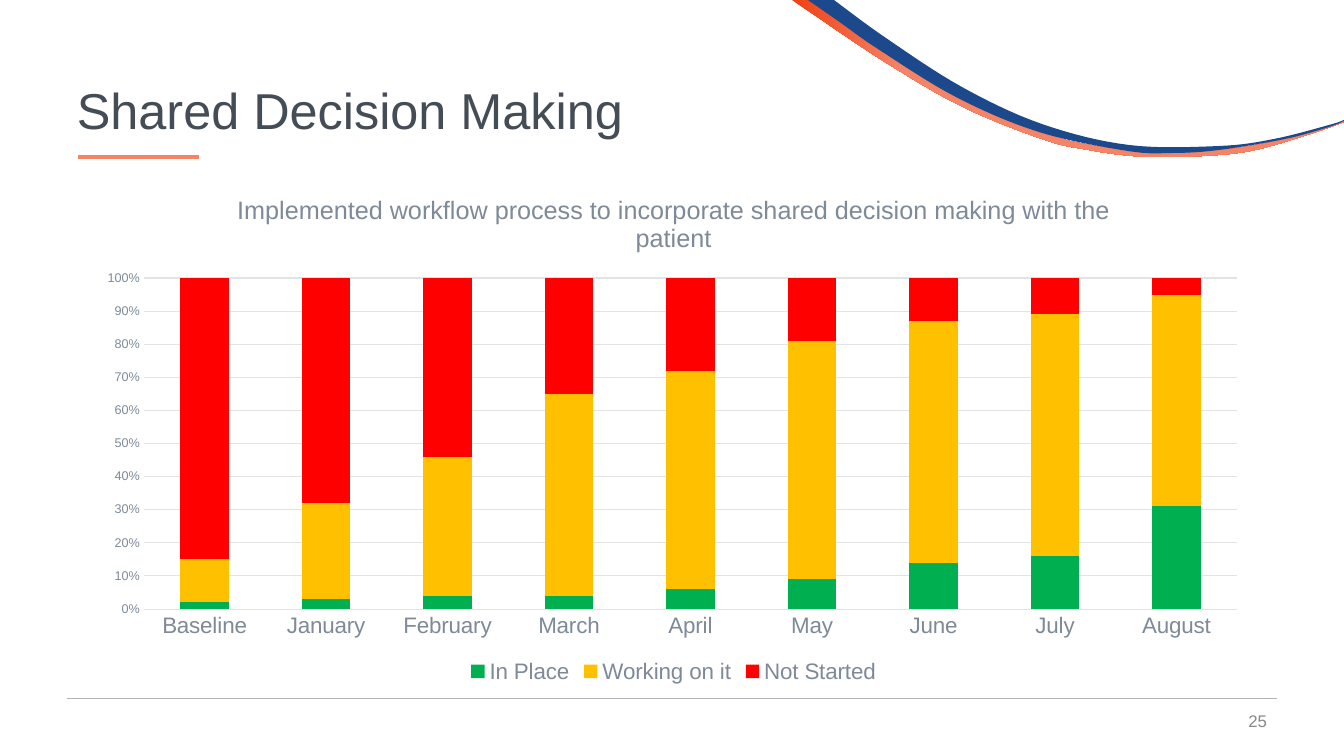
from lxml.etree import SubElement
from pptx import Presentation
from pptx.chart.data import CategoryChartData
from pptx.dml.color import RGBColor
from pptx.enum.chart import XL_CHART_TYPE as ChartType, XL_LEGEND_POSITION as LegendPosition, XL_TICK_MARK as TickMark
from pptx.enum.text import MSO_ANCHOR as Anchor, PP_ALIGN as Align
from pptx.oxml import parse_xml
from pptx.oxml.ns import nsdecls, qn
from pptx.util import Emu, Pt

PX = 914400 / 100.8
THEME = {
    "font": "Arial",
    "title": (36, "444C55"),
    "number": (12, "898989"),
    "chart": (10, "444C55"),
    "chart_title": (18, "7E8A98"),
    "labels": (16, "7E8A98"),
    "scale": (9, "7E8A98"),
    "grid": "E1E4E7",
    "rule": "AFB3B9",
    "navy": "1C498B",
    "coral": "F58366",
    "orange": "F04115",
    "series": ["00B050", "FFC000", "FF0000"],
}


def px(*lengths):
    return [Emu(round(length * PX)) for length in lengths]


def style(font, role):
    size, color = THEME[role]
    formats = {"name": THEME["font"], "size": Pt(size), "bold": False}
    for name, value in formats.items():
        setattr(font, name, value)
    font.color.rgb = RGBColor.from_string(color)


deck = Presentation()
deck.slide_width, deck.slide_height = px(1344, 756)
page = deck.slides.add_slide(deck.slide_layouts[6])

ribbons = [
    ("coral",
     [(811, 0), (889, 54), (966, 100), (1047, 134), (1090, 145), (1134, 151),
      (1177, 153), (1244, 147), (1310, 133), (1344, 121)],
     [(792, 0), (810, 12), (885, 62), (963, 107), (1045, 140), (1089, 150),
      (1133, 156), (1178, 157), (1245, 152), (1304, 136), (1344, 122)]),
    ("navy",
     [(834, 0), (886, 38), (962, 87), (1042, 124), (1129, 145),
      (1219, 146), (1274, 139), (1329, 125), (1344, 120)],
     [(808, 0), (841, 23), (878, 49), (956, 97), (1039, 132), (1128, 151),
      (1173, 153), (1219, 150), (1285, 139), (1329, 127), (1344, 121)]),
]
STEPS = 8
for color, upper, lower in ribbons:
    outline = []
    for edge in (upper, lower[::-1]):
        knots = [edge[0], *edge, edge[-1]]
        for a, b, c, d in zip(knots, knots[1:], knots[2:], knots[3:]):
            for step in range(STEPS):
                t = step / STEPS
                outline.append(px(*(
                    q + t * (r - p) / 2
                    + t**2 * (2 * p - 5 * q + 4 * r - s) / 2
                    + t**3 * (3 * q - p - 3 * r + s) / 2
                    for p, q, r, s in zip(a, b, c, d))))
        outline.append(px(*edge[-1]))
    builder = page.shapes.build_freeform(*outline[0])
    builder.add_line_segments(outline[1:], close=True)
    ribbon = builder.convert_to_shape()
    ribbon.shadow.inherit = False
    ribbon.line.fill.background()
    if color == "coral":
        ribbon.fill.gradient()
        ribbon.fill.gradient_angle = 0
        for stop, shade, place in zip(ribbon.fill.gradient_stops, ("orange", "coral"), (0, 0.2)):
            stop.color.rgb = RGBColor.from_string(THEME[shade])
            stop.position = place
    else:
        ribbon.fill.solid()
        ribbon.fill.fore_color.rgb = RGBColor.from_string(THEME[color])

for left, right, y, color, width in [(67, 1277, 698, "rule", 0.5), (78, 199, 157, "coral", 2.5)]:
    rule = page.shapes.add_connector(1, *px(left, y, right, y))
    rule.line.color.rgb = RGBColor.from_string(THEME[color])
    rule.line.width = Pt(width)
    SubElement(rule._element.spPr, qn("a:effectLst"))

for words, place, role, align, spacing in [
    ("25", (975, 701, 302, 40), "number", Align.RIGHT, 1.0),
    ("Shared Decision Making", (67, 40, 1210, 146), "title", Align.LEFT, 0.9),
]:
    box = page.shapes.add_textbox(*px(*place))
    box.text_frame.word_wrap = True
    box.text_frame.vertical_anchor = Anchor.MIDDLE
    para = box.text_frame.paragraphs[0]
    para.alignment = align
    para.line_spacing = spacing
    span = para.add_run()
    span.text = words
    style(span.font, role)

progress = CategoryChartData()
progress.categories = ["Baseline", "January", "February", "March", "April",
                       "May", "June", "July", "August"]
progress.add_series("In Place", [2, 3, 4, 4, 6, 9, 14, 16, 31])
progress.add_series("Working on it", [13, 29, 42, 61, 66, 72, 74, 73, 64])
progress.add_series("Not Started", [84, 68, 54, 35, 28, 19, 13, 11, 5])
chart = page.shapes.add_chart(
    ChartType.COLUMN_STACKED_100, *px(85, 173, 1177, 515), progress).chart
style(chart.font, "chart")

chart.has_title = True
heading = chart.chart_title.text_frame
heading.text = "Implemented workflow process to incorporate shared decision making with the patient"
style(heading.paragraphs[0].runs[0].font, "chart_title")

chart.has_legend = True
chart.legend.position = LegendPosition.BOTTOM
chart.legend.include_in_layout = False
style(chart.legend.font, "labels")

for axis, role in [(chart.category_axis, "labels"), (chart.value_axis, "scale")]:
    axis.major_tick_mark = axis.minor_tick_mark = TickMark.NONE
    style(axis.tick_labels.font, role)

months, shares = chart.category_axis, chart.value_axis
shares.has_major_gridlines = True
shares.maximum_scale, shares.minimum_scale, shares.major_unit = 1, 0, 0.1
shares.tick_labels.number_format = "0%"
shares.tick_labels.number_format_is_linked = False
shares.format.line.fill.background()
for line in (months.format.line, shares.major_gridlines.format.line):
    line.color.rgb = RGBColor.from_string(THEME["grid"])
    line.width = Pt(0.75)

plot = chart.plots[0]
plot.gap_width, plot.overlap, plot.vary_by_categories = 150, 100, False
for series, color in zip(plot.series, THEME["series"]):
    series.format.fill.solid()
    series.format.fill.fore_color.rgb = RGBColor.from_string(color)

plot_area = chart._chartSpace.chart.plotArea
for old in plot_area.findall(qn("c:layout")):
    plot_area.remove(old)
modes = '<c:xMode val="edge"/><c:yMode val="edge"/>'
plot_area.insert(0, parse_xml(
    f'<c:layout {nsdecls("c")}><c:manualLayout><c:layoutTarget val="inner"/>{modes}'
    '<c:x val="0.05"/><c:y val="0.204"/><c:w val="0.929"/><c:h val="0.643"/>'
    '</c:manualLayout></c:layout>'))

deck.save("out.pptx")
